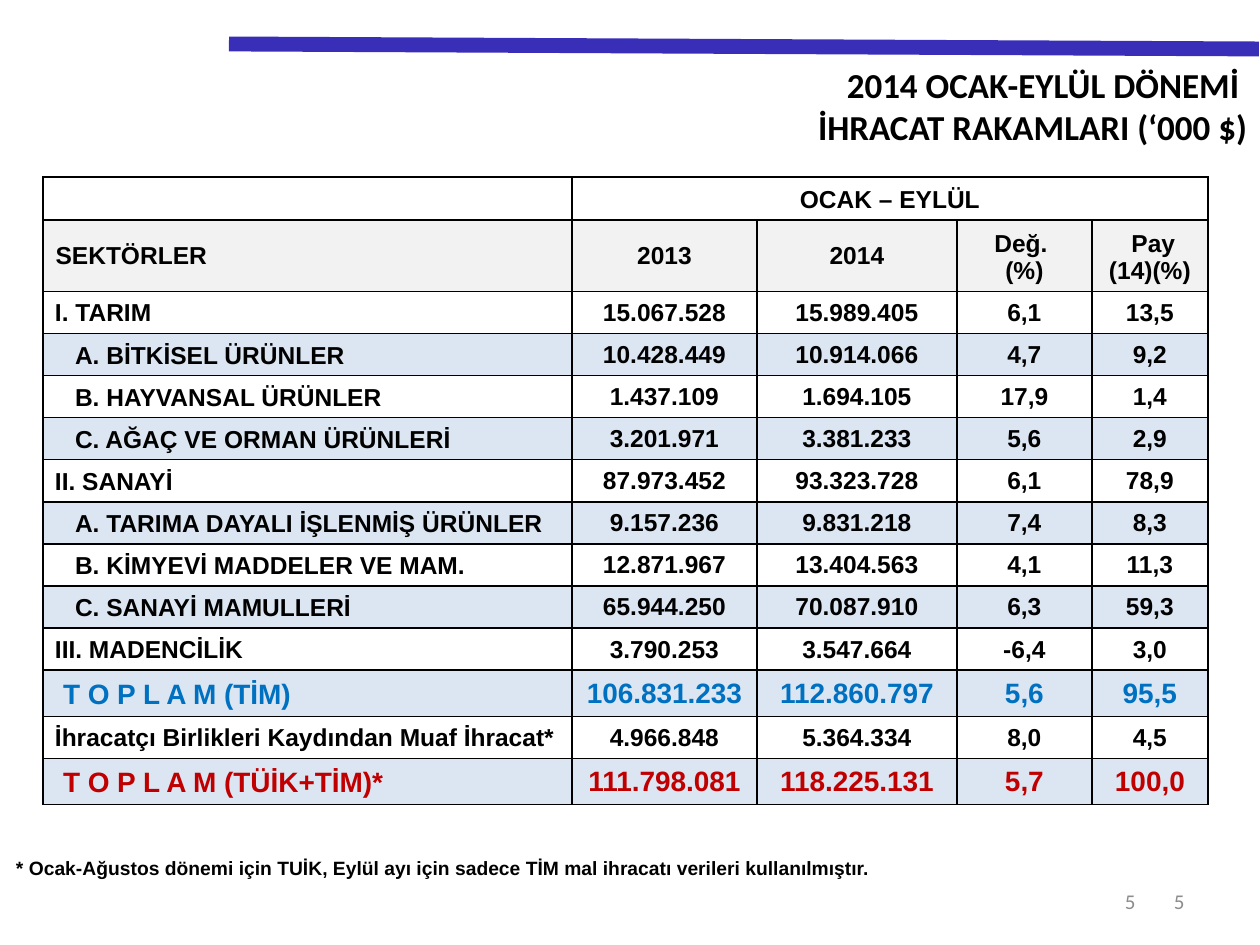
from lxml.etree import SubElement
from pptx import Presentation
from pptx.dml.color import RGBColor
from pptx.enum.shapes import MSO_CONNECTOR as Connector
from pptx.enum.text import MSO_ANCHOR as Anchor, PP_ALIGN as Align
from pptx.oxml.ns import qn
from pptx.util import Pt

PX = 7257
COLORS = {"black": "000000", "bar": "382EB8", "gray": "8C8C8C", "header": "F2F2F2",
          "band": "DCE6F2", "blue": "0070C0", "red": "C00000"}

TITLE = ["2014 OCAK-EYLÜL DÖNEMİ ", "İHRACAT RAKAMLARI (‘000 $)"]
PERIOD = "OCAK – EYLÜL"
HEADINGS = ["SEKTÖRLER", "2013", "2014", "Değ. \n(%)", " Pay\n(14)(%)"]
SECTORS = [
    ("main", "I. TARIM", "15.067.528", "15.989.405", "6,1", "13,5"),
    ("sub", "A. BİTKİSEL ÜRÜNLER", "10.428.449", "10.914.066", "4,7", "9,2"),
    ("sub", "B. HAYVANSAL ÜRÜNLER", "1.437.109", "1.694.105", "17,9", "1,4"),
    ("sub", "C. AĞAÇ VE ORMAN ÜRÜNLERİ", "3.201.971", "3.381.233", "5,6", "2,9"),
    ("main", "II. SANAYİ", "87.973.452", "93.323.728", "6,1", "78,9"),
    ("sub", "A. TARIMA DAYALI İŞLENMİŞ ÜRÜNLER", "9.157.236", "9.831.218", "7,4", "8,3"),
    ("sub", "B. KİMYEVİ MADDELER VE MAM.", "12.871.967", "13.404.563", "4,1", "11,3"),
    ("sub", "C. SANAYİ MAMULLERİ", "65.944.250", "70.087.910", "6,3", "59,3"),
    ("main", "III. MADENCİLİK", "3.790.253", "3.547.664", "-6,4", "3,0"),
    ("tim", "T O P L A M (TİM)", "106.831.233", "112.860.797", "5,6", "95,5"),
    ("main", "İhracatçı Birlikleri Kaydından Muaf İhracat*", "4.966.848", "5.364.334", "8,0", "4,5"),
    ("all", "T O P L A M (TÜİK+TİM)*", "111.798.081", "118.225.131", "5,7", "100,0"),
]
FOOTNOTE = ("* Ocak-Ağustos dönemi için TUİK, Eylül ayı için sadece TİM mal ihracatı "
            "verileri kullanılmıştır.")
STYLES = {
    "main": {"size": 14, "color": "black", "indent": 0, "height": 42},
    "sub": {"size": 14, "color": "black", "indent": 20, "height": 42},
    "tim": {"size": 16, "color": "blue", "indent": 8, "height": 46},
    "all": {"size": 16, "color": "red", "indent": 8, "height": 46},
}
COLUMN_WIDTHS = [529, 185, 200, 135, 116]
HEADER_HEIGHTS = [43, 71]
PAGE_NUMBERS = [(903, 876, 294, 50), (883, 876, 265, 50)]
CELL_INSET = 12


def px(*values):
    return [round(value * PX) for value in values]


def rgb(name):
    return RGBColor.from_string(COLORS[name])


def write(frame, lines, size, color="black", font="Arial", bold=True, align=Align.LEFT):
    for index, line in enumerate(lines):
        paragraph = frame.add_paragraph() if index else frame.paragraphs[0]
        paragraph.alignment = align
        run = paragraph.add_run()
        run.text = line
        run.font.size = Pt(size)
        run.font.name = font
        run.font.bold = bold
        run.font.color.rgb = rgb(color)


def add_text(slide, box, lines, anchor, **style):
    frame = slide.shapes.add_textbox(*px(*box)).text_frame
    frame.word_wrap = True
    frame.vertical_anchor = anchor
    write(frame, lines, font="Calibri", align=Align.RIGHT, **style)


def add_plain_table(slide, left, top, widths, heights):
    box = px(left, top, sum(widths), sum(heights))
    table = slide.shapes.add_table(len(heights), len(widths), *box).table
    table.first_row = table.horz_banding = False
    for column, width in zip(table.columns, px(*widths)):
        column.width = width
    for row, height in zip(table.rows, px(*heights)):
        row.height = height
    return table


def add_borders(cell):
    properties = cell._tc.get_or_add_tcPr()
    for side in ("a:lnL", "a:lnR", "a:lnT", "a:lnB"):
        line = SubElement(properties, qn(side), w=str(Pt(1)))
        fill = SubElement(line, qn("a:solidFill"))
        SubElement(fill, qn("a:srgbClr"), val=COLORS["black"])


def paint(cell, color=None):
    if color:
        cell.fill.solid()
        cell.fill.fore_color.rgb = rgb(color)
    else:
        cell.fill.background()


def set_narrow_margins(cell):
    cell.margin_left = cell.margin_right = cell.margin_top = PX
    cell.margin_bottom = 0


def add_export_table(slide):
    heights = HEADER_HEIGHTS + [STYLES[kind]["height"] for kind, *_ in SECTORS]
    table = add_plain_table(slide, 43, 177, COLUMN_WIDTHS, heights)
    for cell in table.iter_cells():
        add_borders(cell)
        paint(cell)

    set_narrow_margins(table.cell(0, 0))
    period = table.cell(0, 1)
    period.merge(table.cell(0, len(COLUMN_WIDTHS) - 1))
    period.vertical_anchor = Anchor.BOTTOM
    write(period.text_frame, [PERIOD], 14, align=Align.CENTER)

    for column, heading in enumerate(HEADINGS):
        cell = table.cell(1, column)
        lines = heading.split("\n")
        paint(cell, "header")
        cell.vertical_anchor = Anchor.BOTTOM if len(lines) > 1 else Anchor.MIDDLE
        write(cell.text_frame, lines, 14, align=Align.CENTER if column else Align.LEFT)

    for index, (kind, *values) in enumerate(SECTORS):
        style = STYLES[kind]
        for column, value in enumerate(values):
            cell = table.cell(index + len(HEADER_HEIGHTS), column)
            paint(cell, "band" if index % 2 else None)
            if column:
                set_narrow_margins(cell)
                cell.vertical_anchor = Anchor.MIDDLE
            else:
                cell.margin_left = (CELL_INSET + style["indent"]) * PX
                cell.vertical_anchor = Anchor.BOTTOM
            write(cell.text_frame, [value], style["size"], style["color"],
                  align=Align.CENTER if column else Align.LEFT)


def add_footnote(slide):
    cell = add_plain_table(slide, 15, 849, [932], [39]).cell(0, 0)
    paint(cell)
    set_narrow_margins(cell)
    cell.vertical_anchor = Anchor.MIDDLE
    write(cell.text_frame, [FOOTNOTE], 11)


def main():
    presentation = Presentation()
    presentation.slide_width, presentation.slide_height = px(1260, 945)
    slide = presentation.slides.add_slide(presentation.slide_layouts[6])

    bar = slide.shapes.add_connector(Connector.STRAIGHT, *px(229, 44, 1259, 49))
    bar.line.color.rgb = rgb("bar")
    bar.line.width = Pt(8.5)
    SubElement(bar._element.spPr, qn("a:effectLst"))

    for box in PAGE_NUMBERS:
        add_text(slide, box, ["5"], Anchor.MIDDLE, size=12, color="gray", bold=False)
    add_text(slide, (134, 57, 1126, 97), TITLE, Anchor.TOP, size=20)
    add_export_table(slide)
    add_footnote(slide)
    presentation.save("out.pptx")


if __name__ == "__main__":
    main()
